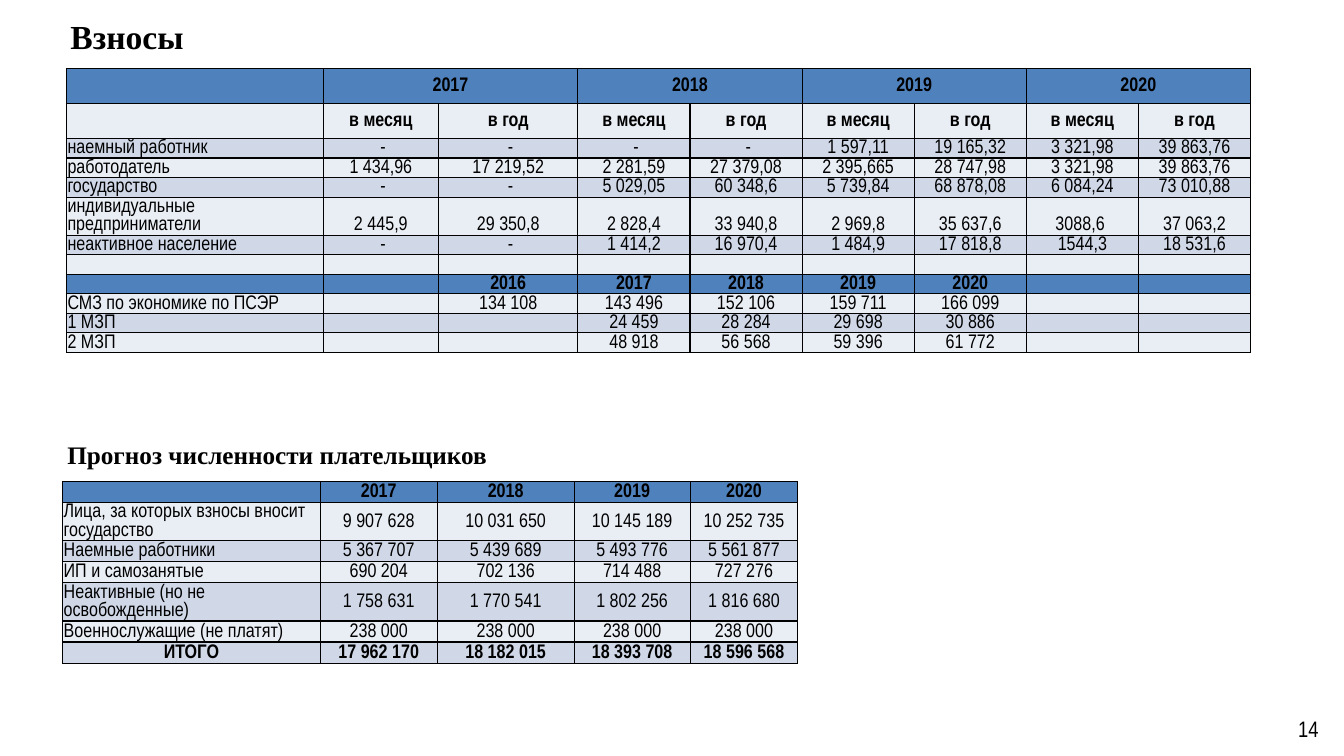
from dataclasses import dataclass

from lxml.etree import SubElement
from pptx import Presentation
from pptx.dml.color import RGBColor
from pptx.enum.text import MSO_ANCHOR, PP_ALIGN
from pptx.oxml.ns import qn
from pptx.util import Pt

HEADER, LIGHT, DARK, BLACK = "4F81BD", "E9EDF4", "D0D8E8", "000000"
BODY_FONT, TITLE_FONT = "Arial Narrow", "Times New Roman"
CELL_SIZE = 14
ROW, TALL_ROW, HEAD_ROW, FORECAST_ROW = 13.87, 27.2, 25, 15.1


@dataclass
class Label:
    text: str
    left: float
    top: float
    width: float
    height: float
    size: float
    font: str = TITLE_FONT
    bold: bool = True
    align: PP_ALIGN = PP_ALIGN.LEFT
    anchor: MSO_ANCHOR = MSO_ANCHOR.TOP
    wrap: bool = True


@dataclass
class Grid:
    left: float
    top: float
    widths: list[float]
    heights: list[float]
    rows: list[str]  # cells separated by "|"
    header_rows: set[int]
    bold_rows: set[int]
    middle_rows: set[int]
    centred_labels: set[int]
    year_columns: range  # first columns of merged pairs in the top row


LABELS = [
    Label("Взносы", 43.2, 7.9, 159, 36, 24),
    Label("Прогноз численности плательщиков", 41, 310.3, 317.5, 29, 18, wrap=False),
    Label("14", 725, 506.2, 224, 28.8, 16, BODY_FONT, False,
          PP_ALIGN.RIGHT, MSO_ANCHOR.MIDDLE),
]

CONTRIBUTIONS = Grid(
    47.5, 49, [183.3, 82.5, 99.5] + [80.1] * 6,
    [HEAD_ROW] * 2 + [ROW] * 3 + [TALL_ROW] + [ROW] * 6,
    [
        "|2017||2018||2019||2020|",
        "|в месяц|в год|в месяц|в год|в месяц|в год|в месяц|в год",
        "наемный работник| -| -| -| -|1 597,11|19 165,32|3 321,98|39 863,76",
        "работодатель|1 434,96|17 219,52|2 281,59|27 379,08|2 395,665|28 747,98|3 321,98|39 863,76",
        "государство| -| -|5 029,05|60 348,6|5 739,84|68 878,08|6 084,24|73 010,88",
        "индивидуальные предприниматели|2 445,9|29 350,8|2 828,4|33 940,8|2 969,8|35 637,6|3088,6 |37 063,2",
        "неактивное население| -| -|1 414,2|16 970,4|1 484,9|17 818,8|1544,3|18 531,6",
        "||||||||",
        "||2016|2017|2018|2019|2020||",
        "СМЗ по экономике по ПСЭР||134 108|143 496|152 106|159 711|166 099||",
        "1 МЗП|||24 459|28 284|29 698|30 886||",
        "2 МЗП|||48 918|56 568|59 396|61 772||",
    ],
    header_rows={0, 8}, bold_rows={0, 1, 8}, middle_rows={0, 1},
    centred_labels=set(), year_columns=range(1, 9, 2),
)

FORECAST = Grid(
    44.8, 343.9, [184, 83.5, 97.9, 82.8, 77],
    [FORECAST_ROW, TALL_ROW, FORECAST_ROW, FORECAST_ROW, TALL_ROW, FORECAST_ROW, FORECAST_ROW],
    [
        "|2017|2018|2019|2020",
        "Лица, за которых взносы вносит государство|9 907 628|10 031 650|10 145 189|10 252 735",
        "Наемные работники|5 367 707|5 439 689|5 493 776|5 561 877",
        "ИП и самозанятые|690 204|702 136|714 488|727 276",
        "Неактивные (но не освобожденные)|1 758 631|1 770 541|1 802 256|1 816 680",
        "Военнослужащие (не платят)|238 000|238 000|238 000|238 000",
        "ИТОГО|17 962 170|18 182 015|18 393 708|18 596 568",
    ],
    header_rows={0}, bold_rows={0, 6}, middle_rows=set(range(6)),
    centred_labels={6}, year_columns=range(0),
)


def rgb(value: str) -> RGBColor:
    return RGBColor.from_string(value)


def style_paragraph(p, font: str, size: float, bold: bool, align: PP_ALIGN) -> None:
    p.alignment = align
    p.font.name, p.font.size, p.font.bold = font, Pt(size), bold
    p.font.color.rgb = rgb(BLACK)


def add_label(s, label: Label) -> None:
    sp = s.shapes.add_textbox(Pt(label.left), Pt(label.top), Pt(label.width), Pt(label.height))
    tf = sp.text_frame
    tf.word_wrap, tf.vertical_anchor = label.wrap, label.anchor
    p = tf.paragraphs[0]
    p.text = label.text
    style_paragraph(p, label.font, label.size, label.bold, label.align)


def add_borders(cell) -> None:
    tc_pr = cell._tc.get_or_add_tcPr()
    for i, side in enumerate(("a:lnL", "a:lnR", "a:lnT", "a:lnB")):
        ln = tc_pr.makeelement(qn(side), {"w": str(Pt(1))})
        fill = SubElement(ln, qn("a:solidFill"))
        SubElement(fill, qn("a:srgbClr"), val=BLACK)
        tc_pr.insert(i, ln)


def add_grid(s, grid: Grid) -> None:
    table = s.shapes.add_table(
        len(grid.rows), len(grid.widths), Pt(grid.left), Pt(grid.top),
        Pt(sum(grid.widths)), Pt(sum(grid.heights))).table
    table.first_row = table.horz_banding = False
    for column, width in zip(table.columns, grid.widths):
        column.width = Pt(width)
    for row, height in zip(table.rows, grid.heights):
        row.height = Pt(height)

    for i, line in enumerate(grid.rows):
        band = HEADER if i in grid.header_rows else LIGHT if i % 2 else DARK
        for j, text in enumerate(line.split("|")):
            cell = table.cell(i, j)
            cell.fill.solid()
            cell.fill.fore_color.rgb = rgb(band)
            add_borders(cell)
            cell.margin_left = cell.margin_right = cell.margin_top = Pt(0.72)
            cell.margin_bottom = 0
            cell.vertical_anchor = MSO_ANCHOR.MIDDLE if i in grid.middle_rows else MSO_ANCHOR.BOTTOM
            p = cell.text_frame.paragraphs[0]
            centred = j > 0 or i in grid.centred_labels
            style_paragraph(p, BODY_FONT, CELL_SIZE, i in grid.bold_rows,
                            PP_ALIGN.CENTER if centred else PP_ALIGN.LEFT)
            if text:
                p.text = text
            else:  # keeps an empty row from growing
                SubElement(p._p, qn("a:endParaRPr"), sz=str(CELL_SIZE * 100))

    for j in grid.year_columns:
        table.cell(0, j).merge(table.cell(0, j + 1))


def main() -> None:
    prs = Presentation()
    prs.slide_width, prs.slide_height = Pt(960), Pt(540)
    s = prs.slides.add_slide(prs.slide_layouts[6])

    # Tables
    for grid in (CONTRIBUTIONS, FORECAST):
        add_grid(s, grid)

    # Headings and page number
    for label in LABELS:
        add_label(s, label)

    prs.save("out.pptx")


if __name__ == "__main__":
    main()
